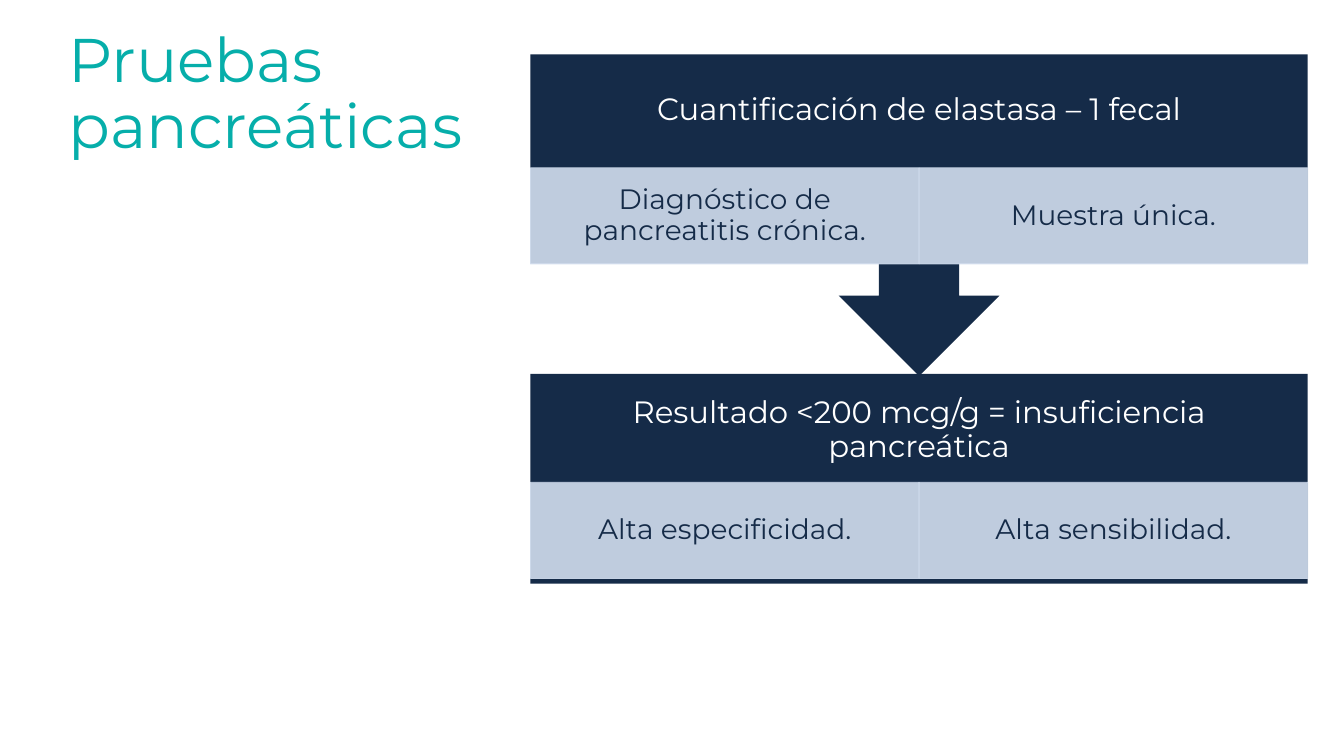
from dataclasses import dataclass

from lxml.etree import SubElement
from pptx import Presentation
from pptx.dml.color import RGBColor
from pptx.enum.shapes import MSO_SHAPE
from pptx.enum.text import MSO_ANCHOR, PP_ALIGN
from pptx.oxml.ns import qn
from pptx.util import Pt


@dataclass(frozen=True)
class Theme:
    font: str = "Montserrat"
    teal: RGBColor = RGBColor(0x06, 0xAE, 0xAA)
    navy: RGBColor = RGBColor(0x15, 0x2B, 0x48)
    pale: RGBColor = RGBColor(0xD2, 0xDE, 0xEF)
    white: RGBColor = RGBColor(0xFF, 0xFF, 0xFF)
    title_size: int = 44
    header_size: int = 22
    cell_size: int = 20


theme = Theme()


def write(shape, text, size, color, align, insets):
    """Fill the shape with one paragraph; insets are left, top, right, bottom."""
    frame = shape.text_frame
    frame.word_wrap = True
    frame.vertical_anchor = MSO_ANCHOR.MIDDLE
    frame.margin_left, frame.margin_top, frame.margin_right, frame.margin_bottom = map(Pt, insets)
    frame.text = text
    para = frame.paragraphs[0]
    para.alignment = align
    para.line_spacing = 0.9
    font = para.runs[0].font
    font.name = theme.font
    font.size = Pt(size)
    font.color.rgb = color


def paint_translucent(shape, color):
    """Give fill and outline the same colour at 90 % opacity."""
    shape.line.width = Pt(0.5)
    for fill in (shape.fill, shape.line.fill):
        fill.solid()
        fill.fore_color.rgb = color
    for color_element in shape._element.spPr.iter(qn("a:srgbClr")):
        SubElement(color_element, qn("a:alpha"), val="90000")


deck = Presentation()
deck.slide_width, deck.slide_height = Pt(960), Pt(540)
page = deck.slides.add_slide(deck.slide_layouts[5])

title = page.shapes.title
title.left, title.top, title.width, title.height = Pt(41.8), Pt(38.9), Pt(391.7), Pt(59)
write(title, "Pruebas pancreáticas", theme.title_size, theme.teal,
      PP_ALIGN.LEFT, (7.2, 3.6, 7.2, 3.6))

left, width = 378.9, 555.2
cell_width, cell_height = width / 2, 68.7
header_inset, header_bottom_inset = 12.2, 81

# Shape, top, height, top of the cells, header, cells; the callout overlaps the block below
blocks = [
    (MSO_SHAPE.RECTANGLE, 267.1, 149.8, 344.5,
     "Resultado <200 mcg/g = insuficiencia pancreática",
     ["Alta especificidad.", "Alta sensibilidad."]),
    (MSO_SHAPE.DOWN_ARROW_CALLOUT, 38.9, 229.7, 119.9,
     "Cuantificación de elastasa – 1 fecal",
     ["Diagnóstico de pancreatitis crónica.", "Muestra única."]),
]

for kind, top, height, cells_top, header, cells in blocks:
    block = page.shapes.add_shape(kind, Pt(left), Pt(top), Pt(width), Pt(height))
    block.shadow.inherit = False
    block.fill.solid()
    block.fill.fore_color.rgb = theme.navy
    block.line.fill.background()
    write(block, header, theme.header_size, theme.white, PP_ALIGN.CENTER,
          (header_inset, header_inset, header_inset, header_bottom_inset))

    for column, text in enumerate(cells):
        cell = page.shapes.add_shape(
            MSO_SHAPE.RECTANGLE, Pt(left + column * cell_width), Pt(cells_top),
            Pt(cell_width), Pt(cell_height))
        cell.shadow.inherit = False
        paint_translucent(cell, theme.pale)
        write(cell, text, theme.cell_size, theme.navy, PP_ALIGN.CENTER, (11.5, 2, 11.5, 2))

deck.save("out.pptx")
